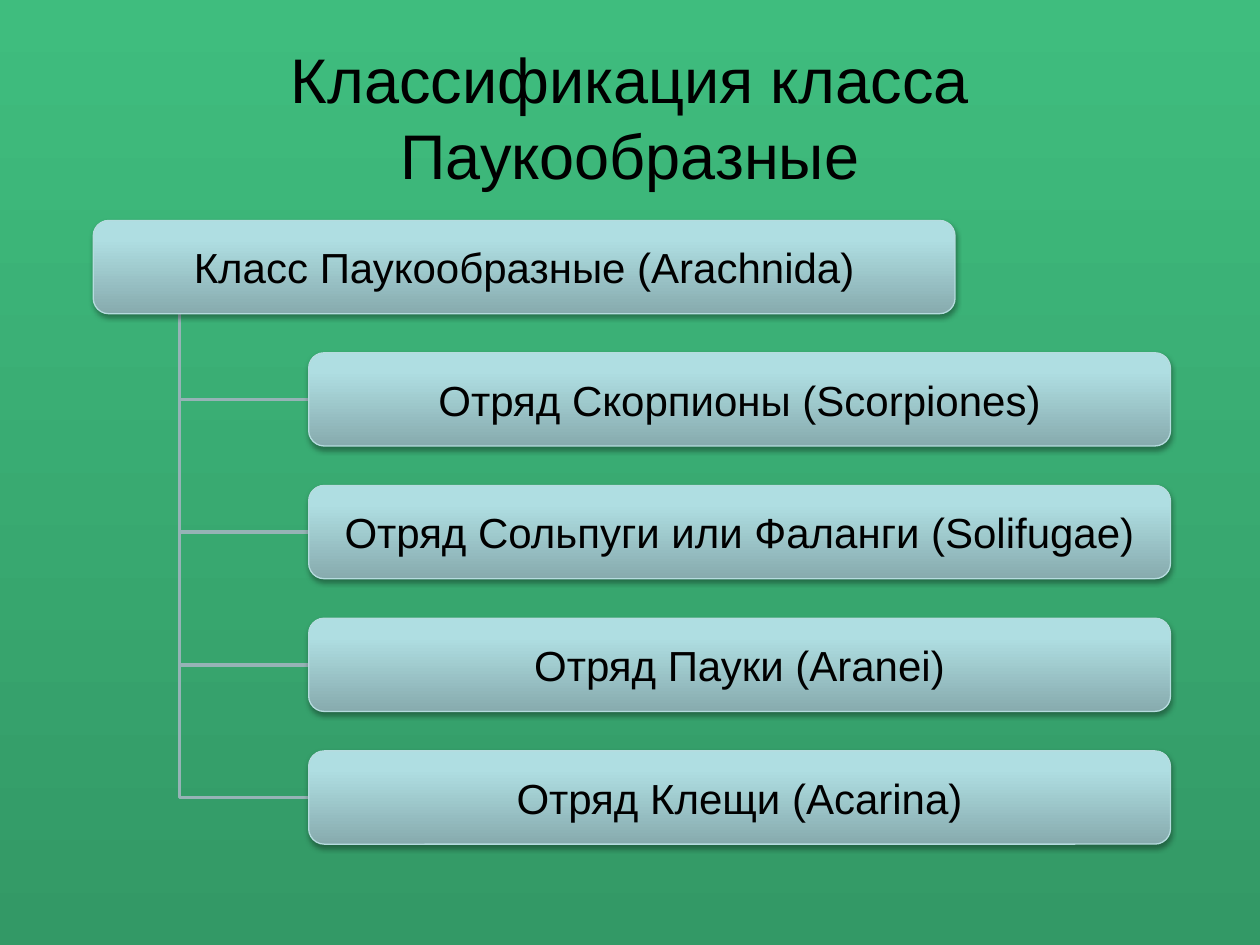
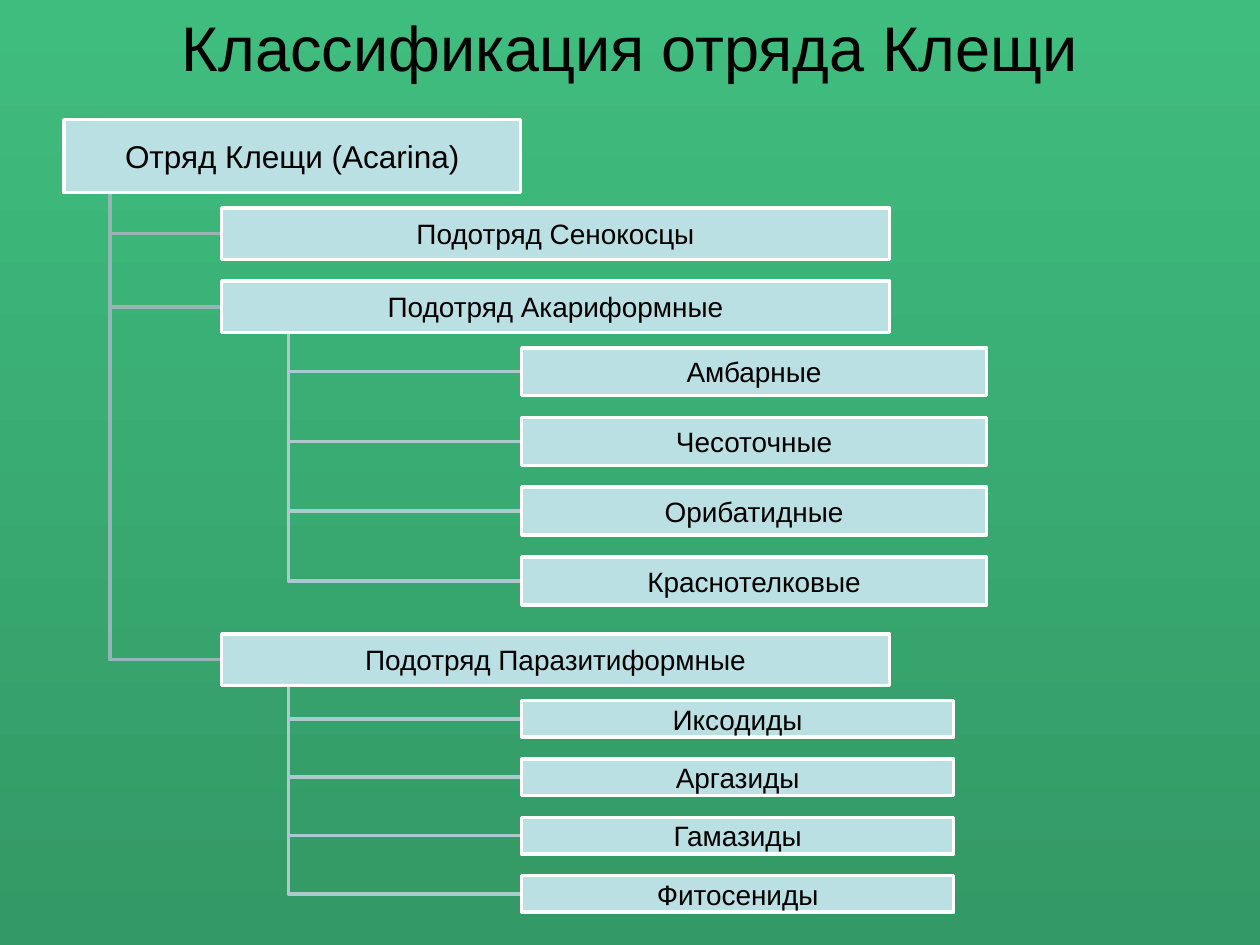
from collections import namedtuple
from copy import deepcopy

from lxml import etree
from pptx import Presentation
from pptx.dml.color import RGBColor
from pptx.enum import shapes, text
from pptx.oxml.ns import qn
from pptx.util import Inches, Pt

# Shared look
FONT = "Arial"
COLORS = {
    "text": "000000",
    "page_top": "3FBD7E",
    "page_bottom": "339966",
    "trunk": "96B3B6",
    "branch": "AACBCE",
    "card_dark": "87ABAE",
    "card_mid": "AFDEE2",
    "card_light": "AFE0E4",
    "card_line": "B6DCDF",
    "box": "BBE0E3",
    "box_line": "FFFFFF",
}
PAGE_STOPS = [(0, "page_top"), (1, "page_bottom")]
CARD_STOPS = [(0, "card_dark"), (0.8, "card_mid"), (1, "card_light")]

# Content: frames are left, top, width, height in inches
Node = namedtuple("Node", "label frame size children", defaults=[()])


def stack(labels, left, width, height, size, first_top, last_top):
    """Equally spaced nodes, one below the other."""
    pitch = (last_top - first_top) / (len(labels) - 1)
    return [Node(label, (left, first_top + row * pitch, width, height), size)
            for row, label in enumerate(labels)]


ORDERS = [
    "Отряд Скорпионы (Scorpiones)",
    "Отряд Сольпуги или Фаланги (Solifugae)",
    "Отряд Пауки (Aranei)",
    "Отряд Клещи (Acarina)",
]
ACARIFORM = ["Амбарные", "Чесоточные", "Орибатидные", "Краснотелковые"]
PARASITIFORM = ["Иксодиды", "Аргазиды", "Гамазиды", "Фитосениды"]

SUBORDERS = [
    Node(label, (1.76, top, 5.3, 0.41), 16, children)
    for label, top, children in [
        ("Подотряд Сенокосцы", 1.65, ()),
        ("Подотряд Акариформные", 2.23,
         stack(ACARIFORM, 4.14, 3.69, 0.38, 16, 2.76, 4.42)),
        ("Подотряд Паразитиформные", 5.03,
         stack(PARASITIFORM, 4.14, 3.43, 0.29, 16, 5.56, 6.95)),
    ]
]

PAGES = [
    {
        "title": "Классификация класса Паукообразные",
        "title_frame": (0.5, 0.3, 9, 1.25),
        "style": "card",
        "root": Node("Класс Паукообразные (Arachnida)", (0.74, 1.75, 6.84, 0.74), 24,
                     stack(ORDERS, 2.45, 6.84, 0.74, 24, 2.8, 5.96)),
    },
    {
        "title": "Классификация отряда Клещи",
        "title_frame": (0.5, 0.05, 9, 0.63),
        "style": "box",
        "root": Node("Отряд Клещи (Acarina)", (0.51, 0.95, 3.62, 0.58), 18, SUBORDERS),
    },
]


# Formatting helpers
def rgb(name):
    return RGBColor.from_string(COLORS[name])


def paint_gradient(fill, owner, stops, angle):
    fill.gradient()
    fill.gradient_angle = angle
    stop_list = next(owner.iter(qn("a:gsLst")))
    while len(stop_list) < len(stops):
        stop_list.append(deepcopy(stop_list[0]))
    for stop, (position, color) in zip(fill.gradient_stops, stops):
        stop.position = position
        stop.color.rgb = rgb(color)


def set_line(shape, color, width):
    shape.line.color.rgb = rgb(color)
    shape.line.width = Pt(width)


def add_shadow(shape):
    effects = shape._element.spPr.find(qn("a:effectLst"))
    shadow = etree.SubElement(effects, qn("a:outerShdw"), blurRad=str(Pt(3.1)),
                              dist=str(Pt(1.8)), dir="5400000", rotWithShape="0")
    color = etree.SubElement(shadow, qn("a:srgbClr"), val="000000")
    etree.SubElement(color, qn("a:alpha"), val="35000")


def write(shape, label, size):
    frame = shape.text_frame
    frame.text = label
    frame.word_wrap = True
    frame.auto_size = text.MSO_AUTO_SIZE.NONE
    frame.vertical_anchor = text.MSO_ANCHOR.MIDDLE
    para = frame.paragraphs[0]
    para.alignment = text.PP_ALIGN.CENTER
    para.font.name = FONT
    para.font.size = Pt(size)
    para.font.color.rgb = rgb("text")
    return frame


# Slide parts
def add_title(page, title, title_frame):
    box = page.shapes.title
    box.left, box.top, box.width, box.height = map(Inches, title_frame)
    write(box, title, 36)


def add_branches(page, parent, color="trunk"):
    """Elbow lines leave the parent at a tenth of its width."""
    left, top, width, height = parent.frame
    trunk_x, trunk_y = Inches(left + width / 10), Inches(top + height)
    for child in reversed(parent.children):
        child_left, child_top, _, child_height = child.frame
        middle = Inches(child_top + child_height / 2)
        add_branches(page, child, "branch")
        builder = page.shapes.build_freeform(trunk_x, trunk_y)
        builder.add_line_segments([(trunk_x, middle), (Inches(child_left), middle)],
                                  close=False)
        elbow = builder.convert_to_shape()
        elbow.shadow.inherit = False
        elbow.fill.background()
        set_line(elbow, color, 2)


def add_nodes(page, node, style):
    is_card = style == "card"
    kind = shapes.MSO_SHAPE.ROUNDED_RECTANGLE if is_card else shapes.MSO_SHAPE.RECTANGLE
    box = page.shapes.add_shape(kind, *map(Inches, node.frame))
    box.shadow.inherit = False
    if is_card:
        paint_gradient(box.fill, box._element, CARD_STOPS, 90)
        set_line(box, "card_line", 0.75)
        add_shadow(box)
    else:
        box.fill.solid()
        box.fill.fore_color.rgb = rgb("box")
        set_line(box, "box_line", 2)
    frame = write(box, node.label, node.size)
    inset = Inches(0.02 if is_card else 0.01)
    frame.margin_left = frame.margin_right = inset
    frame.margin_top = frame.margin_bottom = inset
    for child in node.children:
        add_nodes(page, child, style)


def main():
    deck = Presentation()
    deck.slide_width, deck.slide_height = Inches(10), Inches(7.5)
    master = deck.slide_master
    paint_gradient(master.background.fill, master._element, PAGE_STOPS, 270)
    title_only = deck.slide_layouts.get_by_name("Title Only")
    for content in PAGES:
        page = deck.slides.add_slide(title_only)
        add_title(page, content["title"], content["title_frame"])
        add_branches(page, content["root"])
        add_nodes(page, content["root"], content["style"])
    deck.save("out.pptx")


if __name__ == "__main__":
    main()
